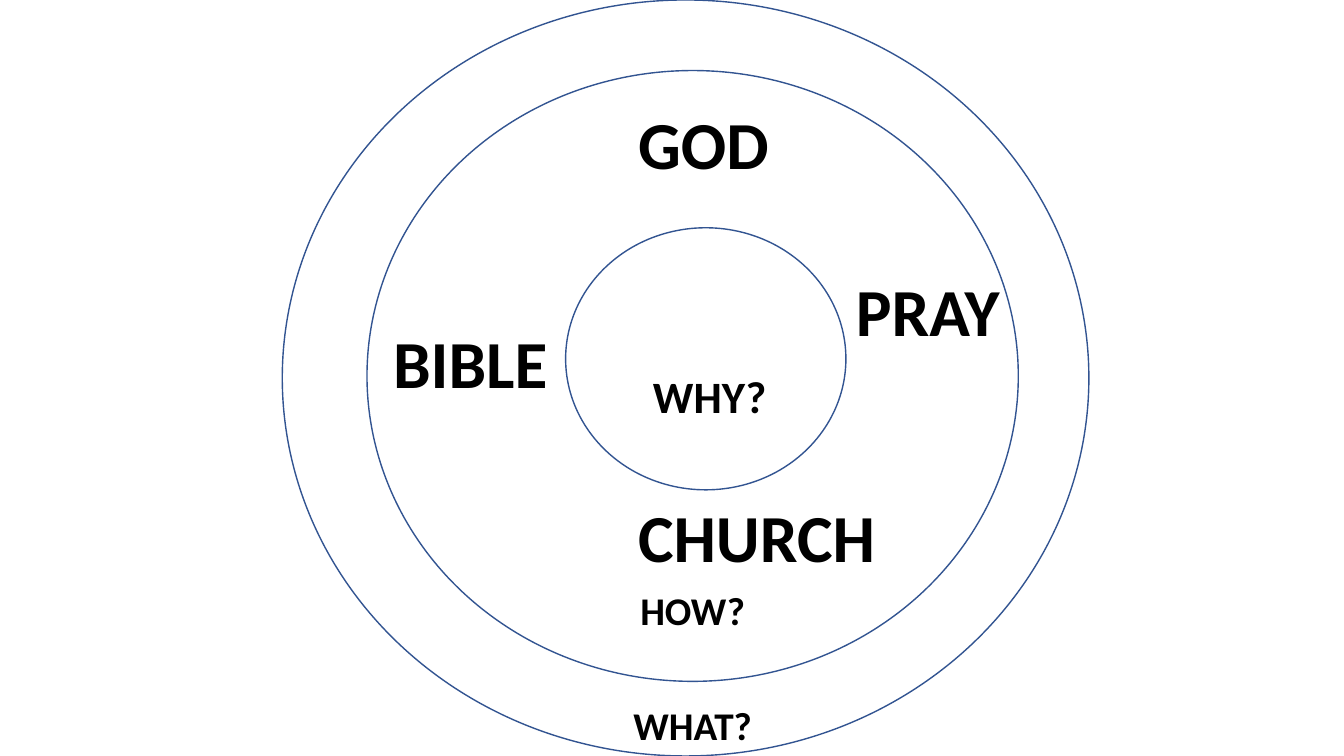
"""Draw a slide of nested WHY, HOW and WHAT circles with four words of faith."""
from pptx import Presentation
from pptx.dml.color import RGBColor
from pptx.enum import shapes, text
from pptx.util import Inches, Pt

BLUE = RGBColor(0x32, 0x54, 0x91)
BLACK = RGBColor(0, 0, 0)
FONT = "Calibri"

CIRCLES = [
    (5.61, 2.26, 2.78, 2.6),
    (3.64, 0.7, 6.46, 6.06),
    (2.8, 0, 8, 7.5),
]
QUESTIONS = [
    ("WHAT?", 5.61, 6.91, 2.52, 0.57, 28),
    ("HOW?", 5.61, 5.77, 2.52, 0.57, 28),
    ("WHY?", 6.32, 3.61, 1.44, 0.64, 32),
]
WORDS = [
    ("GOD", 6.23, 0.97, 1.59),
    ("BIBLE", 3.8, 3.14, 1.81),
    ("PRAY", 8.39, 2.62, 1.71),
    ("CHURCH", 6.23, 4.86, 2.75),
]


def add_circle(page, left, top, width, height):
    """Add an unfilled ellipse with a thin blue outline."""
    circle = page.shapes.add_shape(
        shapes.MSO_SHAPE.OVAL, Inches(left), Inches(top), Inches(width), Inches(height))
    circle.shadow.inherit = False
    circle.fill.background()
    circle.line.color.rgb = BLUE
    circle.line.width = Pt(1)


def add_label(page, wording, left, top, width, height, size, align):
    """Add a bold black one-line label."""
    box = page.shapes.add_textbox(Inches(left), Inches(top), Inches(width), Inches(height))
    box.text_frame.word_wrap = True
    para = box.text_frame.paragraphs[0]
    para.alignment = align
    span = para.add_run()
    span.text = wording
    span.font.name = FONT
    span.font.size = Pt(size)
    span.font.bold = True
    span.font.color.rgb = BLACK


def main():
    """Build the slide and save the deck."""
    deck = Presentation()
    deck.slide_width, deck.slide_height = Inches(13.33), Inches(7.5)
    page = deck.slides.add_slide(deck.slide_layouts[6])
    for circle in CIRCLES:
        add_circle(page, *circle)
    for question in QUESTIONS:
        add_label(page, *question, text.PP_ALIGN.CENTER)
    for word in WORDS:
        add_label(page, *word, 0.91, 48, text.PP_ALIGN.LEFT)
    deck.save("out.pptx")


if __name__ == "__main__":
    main()
